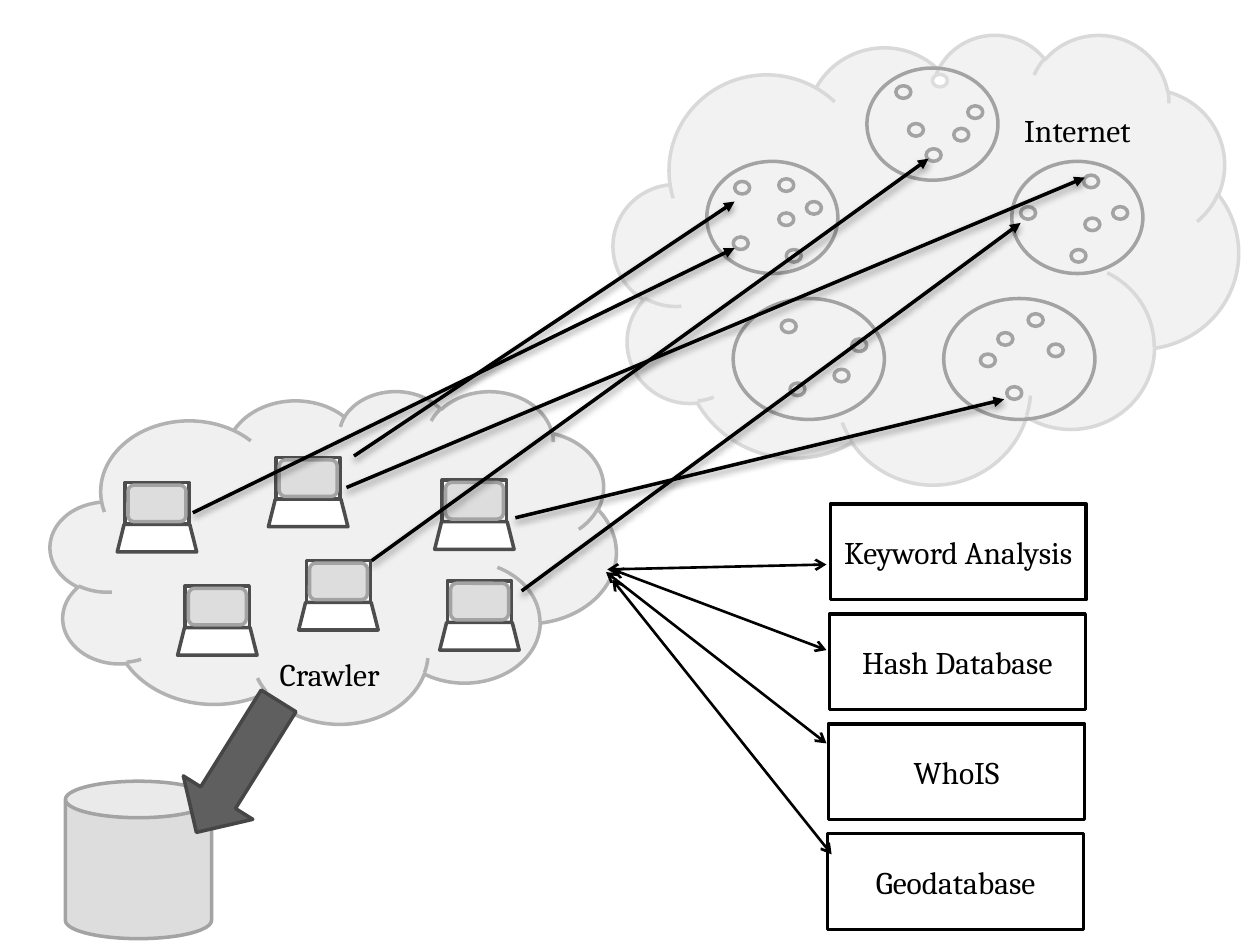
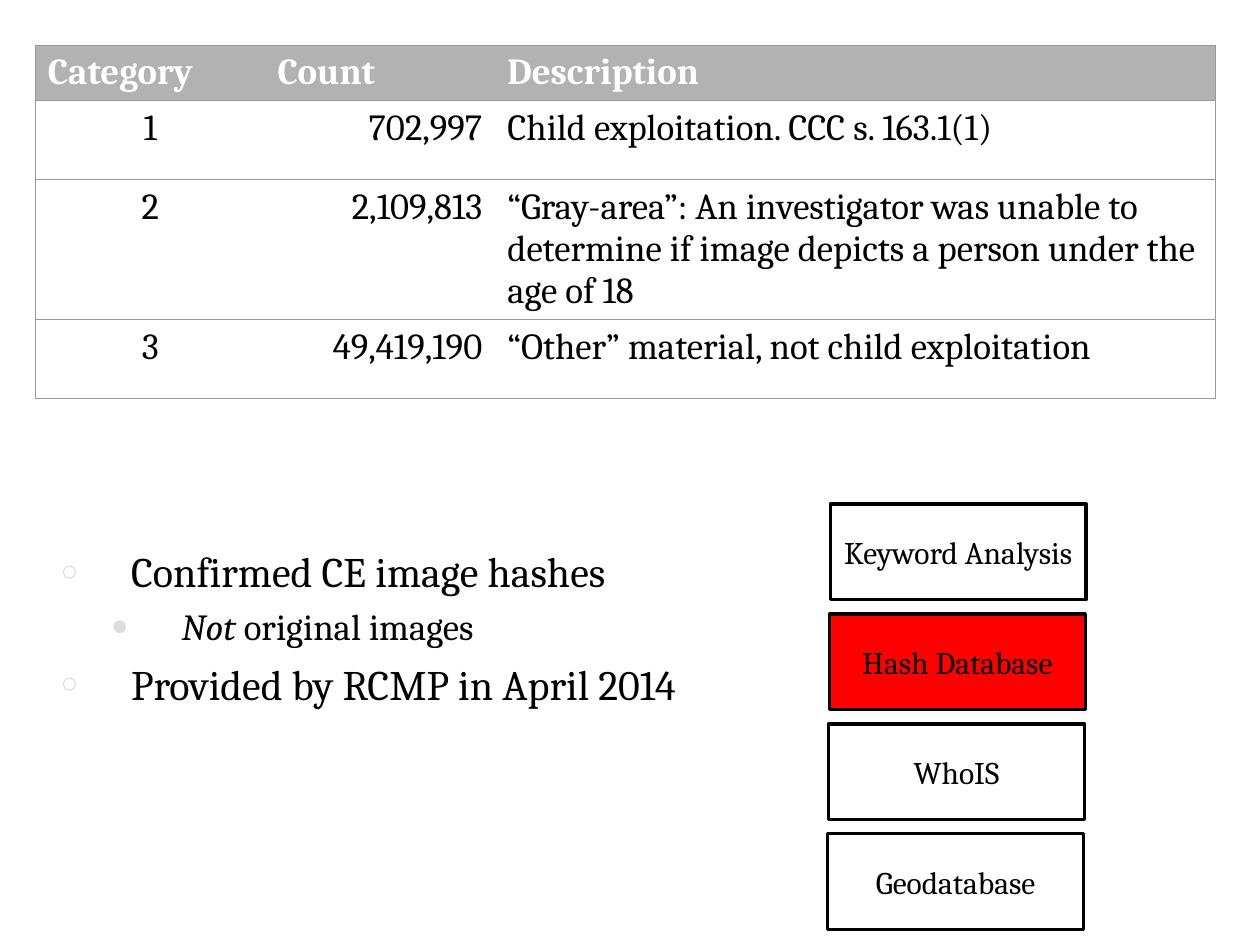
"""Build two slides on a web crawler and its hash database."""
from dataclasses import dataclass
from typing import NamedTuple, Optional

from lxml import etree
from pptx import Presentation
from pptx.dml.color import RGBColor
from pptx.enum.shapes import MSO_CONNECTOR, MSO_SHAPE
from pptx.enum.text import MSO_ANCHOR, MSO_AUTO_SIZE, PP_ALIGN
from pptx.oxml.ns import qn
from pptx.util import Pt

CLOUD, ELLIPSE, RECTANGLE = MSO_SHAPE.CLOUD, MSO_SHAPE.OVAL, MSO_SHAPE.RECTANGLE
ROUNDED, TRAPEZOID = MSO_SHAPE.ROUNDED_RECTANGLE, MSO_SHAPE.TRAPEZOID
CAN, RIGHT_ARROW = MSO_SHAPE.CAN, MSO_SHAPE.RIGHT_ARROW
STRAIGHT, MIDDLE = MSO_CONNECTOR.STRAIGHT, MSO_ANCHOR.MIDDLE
LEFT, CENTER, RIGHT = PP_ALIGN.LEFT, PP_ALIGN.CENTER, PP_ALIGN.RIGHT

FONT = "Cambria"
BLACK, WHITE, RED = "000000", "FFFFFF", "FF0000"
GRAY, PALE, DARK = "A3A3A3", "DDDDDD", "4D4D4D"
HEADER_FILL, TABLE_LINE = "B2B2B2", "989898"


class Box(NamedTuple):
    left: float
    top: float
    width: float
    height: float


class Arrow(NamedTuple):
    start: tuple[float, float]
    end: tuple[float, float]


@dataclass
class Cluster:
    box: Box
    pages: list[tuple[float, float]]


@dataclass
class Bullet:
    runs: list[tuple[str, bool]]
    level: int
    space_before: float


class BulletStyle(NamedTuple):
    character: str
    percent: int
    margin: float
    size: float


SERVICES = ["Keyword Analysis", "Hash Database", "WhoIS", "Geodatabase"]
PAGE_SIZE = (8.6, 7.2)
FADED_PAGE = (532.8, 42.5)
CLUSTERS = [
    Cluster(Box(495.4, 38.9, 74.9, 64.1),
            [(511.9, 49), FADED_PAGE, (519.1, 70.6), (545, 73.4), (529.2, 85), (553, 60.5)]),
    Cluster(Box(578.2, 92.2, 74.9, 64.1),
            [(583.2, 118.1), (619.2, 100.1), (619.9, 124.6), (612, 142.6), (635.8, 118.1)]),
    Cluster(Box(539.3, 170.6, 86.4, 69.1),
            [(570.2, 190.1), (587.5, 179.3), (560.2, 202.3), (575.3, 221), (599, 196.6)]),
    Cluster(Box(403.9, 92.2, 74.9, 64.1),
            [(419.8, 103.7), (445, 102.2), (419, 135.4), (445, 121.7), (449.3, 142.6),
             (460.8, 115.2)]),
    Cluster(Box(419, 170.6, 86.4, 69.1),
            [(446.4, 182.9), (476.6, 211), (451.4, 218.9), (486.7, 193.7)]),
]
LAPTOPS = [(175, 320.4), (105.8, 334.8), (255.6, 331.9),
           (71.3, 275.8), (157.7, 261.4), (252.7, 274.3)]
CRAWL_ARROWS = [
    Arrow((202.3, 260.6), (419.8, 115.2)),
    Arrow((294.5, 295.9), (573.8, 228.2)),
    Arrow((298.1, 337.7), (583.2, 127.4)),
    Arrow((212.4, 320.4), (530.6, 90.7)),
    Arrow((110.2, 293), (419.8, 141.8)),
    Arrow((198, 278.6), (619.9, 101.5)),
]
SERVICE_ARROWS = [
    Arrow((347, 325.4), (472.3, 322.6)),
    Arrow((349.9, 325.4), (472.3, 371.5)),
    Arrow((346.3, 326.9), (472.3, 424.8)),
    Arrow((349.9, 331.2), (475.2, 488.2)),
]
COLUMN_WIDTHS = [131.3, 131.3, 411.9]
ROW_HEIGHTS = [31.6, 45.2, 80, 45.2]
CATEGORY_ROWS = [
    ("Category", "Count", "Description"),
    ("1", "702,997", "Child exploitation. CCC s. 163.1(1)"),
    ("2", "2,109,813", "“Gray-area”: An investigator was unable to determine "
                       "if image depicts a person under the age of 18"),
    ("3", "49,419,190", "“Other” material, not child exploitation"),
]
BULLET_STYLES = [BulletStyle("○", 70, 47.5, 24), BulletStyle("●", 80, 76.3, 21)]
BULLET_HANG = 40.3
BULLETS = [
    Bullet([("Confirmed CE image hashes", False)], 0, 0),
    Bullet([("Not ", True), ("original images", False)], 1, 4.2),
    Bullet([("Provided by RCMP in April 2014", False)], 0, 6),
]


def rgb(color: str) -> RGBColor:
    return RGBColor.from_string(color)


def points(values) -> list:
    return [Pt(value) for value in values]


def add_child(parent, tag: str, **attributes):
    child = etree.SubElement(parent, qn(tag))
    for name, value in attributes.items():
        child.set(name, str(value))
    return child


def format_paragraph(paragraph, size: float, color: str = BLACK, alignment=LEFT) -> None:
    paragraph.alignment = alignment
    paragraph.font.name = FONT
    paragraph.font.size = Pt(size)
    paragraph.font.color.rgb = rgb(color)


def add_shape(slide, kind, box: Box, fill: Optional[str], line: str):
    shape = slide.shapes.add_shape(kind, *points(box))
    shape.shadow.inherit = False
    if fill:
        shape.fill.solid()
        shape.fill.fore_color.rgb = rgb(fill)
    else:
        shape.fill.background()
    shape.line.color.rgb = rgb(line)
    shape.line.width = Pt(2)
    return shape


def add_label(slide, text: str, box: Box, alignment, wrap: bool) -> None:
    frame = slide.shapes.add_textbox(*points(box)).text_frame
    frame.word_wrap = wrap
    frame.text = text
    format_paragraph(frame.paragraphs[0], 18, alignment=alignment)


def add_arrow(slide, arrow: Arrow, width: float, head: str, double: bool = False,
              shadow: bool = False) -> None:
    connector = slide.shapes.add_connector(STRAIGHT, *points(arrow.start + arrow.end))
    connector.line.color.rgb = rgb(BLACK)
    connector.line.width = Pt(width)
    line = connector.line._get_or_add_ln()
    if double:
        add_child(line, "a:headEnd", type=head)
    add_child(line, "a:tailEnd", type=head)
    effects = add_child(connector._element.spPr, "a:effectLst")
    if shadow:
        outer = add_child(effects, "a:outerShdw", blurRad=Pt(4), dist=Pt(2),
                          dir=90 * 60000, rotWithShape=0)
        color = add_child(outer, "a:srgbClr", val=BLACK)
        add_child(color, "a:alpha", val=40000)


def add_cluster(slide, cluster: Cluster) -> None:
    add_shape(slide, ELLIPSE, cluster.box, None, GRAY)
    for page in cluster.pages:
        fill, line = (WHITE, PALE) if page == FADED_PAGE else (None, GRAY)
        add_shape(slide, ELLIPSE, Box(*page, *PAGE_SIZE), fill, line)


def add_laptop(slide, left: float, top: float) -> None:
    add_shape(slide, RECTANGLE, Box(left, top, 36.7, 23.8), WHITE, DARK)
    add_shape(slide, TRAPEZOID, Box(left - 4.3, top + 23.8, 45.4, 15.8), WHITE, DARK)
    add_shape(slide, ROUNDED, Box(left + 1.9, top + 1.4, 33.1, 20.9), PALE, GRAY)


def add_services(slide, highlighted: Optional[str] = None) -> None:
    for index, name in enumerate(SERVICES):
        box = Box(474.5 - 0.5 * index, 288 + 62.8 * index, 146.2, 54.7)
        fill = RED if name == highlighted else WHITE
        frame = add_shape(slide, RECTANGLE, box, fill, BLACK).text_frame
        frame.word_wrap = True
        frame.vertical_anchor = MIDDLE
        frame.text = name
        format_paragraph(frame.paragraphs[0], 18, alignment=CENTER)


def set_borders(cell, first: bool, last: bool) -> None:
    properties = cell._tc.get_or_add_tcPr()
    sides = [("a:lnL", first), ("a:lnR", last), ("a:lnT", True), ("a:lnB", True)]
    for index, (tag, visible) in enumerate(sides):
        line = add_child(properties, tag, w=Pt(1))
        if visible:
            add_child(add_child(line, "a:solidFill"), "a:srgbClr", val=TABLE_LINE)
        else:
            add_child(line, "a:noFill")
        properties.insert(index, line)


def add_category_table(slide) -> None:
    box = Box(20.2, 25.9, sum(COLUMN_WIDTHS), sum(ROW_HEIGHTS))
    table = slide.shapes.add_table(len(ROW_HEIGHTS), len(COLUMN_WIDTHS), *points(box)).table
    table.horz_banding = False
    for column, width in zip(table.columns, COLUMN_WIDTHS):
        column.width = Pt(width)
    for row_index, (row, height) in enumerate(zip(table.rows, ROW_HEIGHTS)):
        row.height = Pt(height)
        header = row_index == 0
        alignments = [LEFT] * 3 if header else [CENTER, RIGHT, LEFT]
        for column_index, cell in enumerate(row.cells):
            cell.text = CATEGORY_ROWS[row_index][column_index]
            paragraph = cell.text_frame.paragraphs[0]
            format_paragraph(paragraph, 21, WHITE if header else BLACK,
                             alignments[column_index])
            paragraph.font.bold = header
            if header:
                cell.fill.solid()
                cell.fill.fore_color.rgb = rgb(HEADER_FILL)
            else:
                cell.fill.background()
            set_borders(cell, column_index == 0, column_index == len(COLUMN_WIDTHS) - 1)


def fill_body(body) -> None:
    body.left, body.top, body.width, body.height = points(Box(20.2, 308.2, 396.7, 139.7))
    frame = body.text_frame
    frame.auto_size = MSO_AUTO_SIZE.NONE
    for index, bullet in enumerate(BULLETS):
        paragraph = frame.add_paragraph() if index else frame.paragraphs[0]
        style = BULLET_STYLES[bullet.level]
        paragraph.level = bullet.level
        properties = paragraph._p.get_or_add_pPr()
        properties.set("marL", str(Pt(style.margin)))
        properties.set("indent", str(-Pt(BULLET_HANG)))
        add_child(add_child(properties, "a:buClr"), "a:srgbClr", val=PALE)
        add_child(properties, "a:buSzPct", val=style.percent * 1000)
        add_child(properties, "a:buChar", char=style.character)
        paragraph.space_before = Pt(bullet.space_before)
        format_paragraph(paragraph, style.size)
        for text, italic in bullet.runs:
            run = paragraph.add_run()
            run.text = text
            if italic:
                run.font.italic = True


def build_crawler_slide(presentation) -> None:
    slide = presentation.slides.add_slide(presentation.slide_layouts[6])
    add_shape(slide, CLOUD, Box(350.6, 19.4, 357.1, 257), "F2F2F2", "D9D9D9")
    for cluster in CLUSTERS:
        add_cluster(slide, cluster)
    add_shape(slide, CLOUD, Box(28.8, 223.2, 323.3, 190.1), "F0F0F0", "B2B2B2")
    for left, top in LAPTOPS:
        add_laptop(slide, left, top)
    add_label(slide, "Crawler", Box(72, 370.8, 232.6, 28.8), CENTER, True)
    add_label(slide, "Internet", Box(578.2, 59.8, 76.3, 28.8), LEFT, False)
    add_shape(slide, CAN, Box(37.4, 446.4, 83.5, 90), PALE, GRAY)
    for arrow in CRAWL_ARROWS:
        add_arrow(slide, arrow, 2, "triangle", shadow=True)
    storage_arrow = add_shape(slide, RIGHT_ARROW, Box(91.4, 414.7, 88.6, 46.8),
                              "5F5F5F", "464646")
    storage_arrow.rotation = 122
    add_services(slide)
    for arrow in SERVICE_ARROWS:
        add_arrow(slide, arrow, 1.5, "arrow", double=True)


def build_hash_slide(presentation) -> None:
    slide = presentation.slides.add_slide(presentation.slide_layouts[1])
    title = slide.shapes.title._element
    title.getparent().remove(title)
    add_services(slide, "Hash Database")
    add_category_table(slide)
    fill_body(slide.placeholders[1])


def main() -> None:
    presentation = Presentation()
    presentation.slide_width, presentation.slide_height = Pt(720), Pt(540)
    build_crawler_slide(presentation)
    build_hash_slide(presentation)
    presentation.save("out.pptx")


if __name__ == "__main__":
    main()
